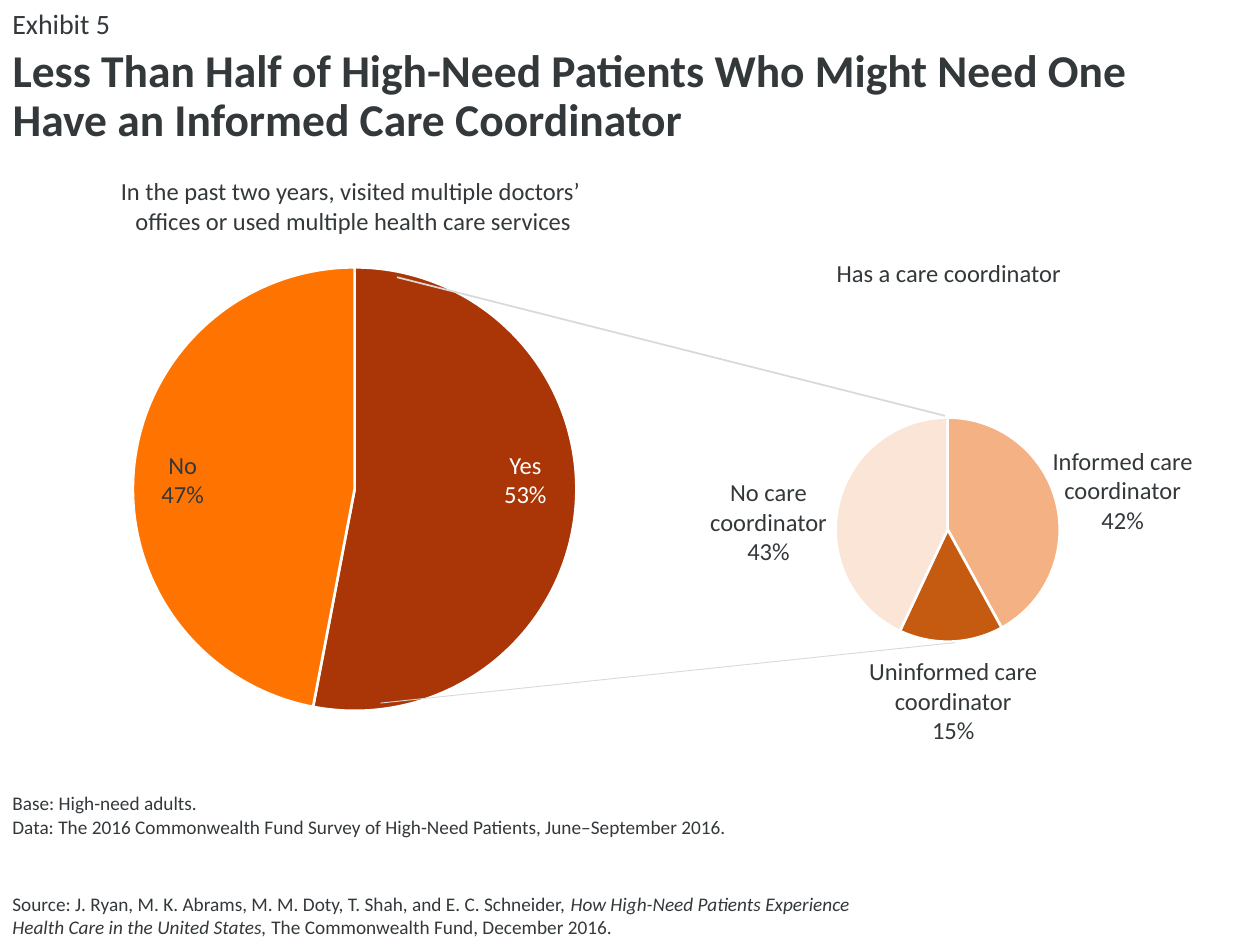
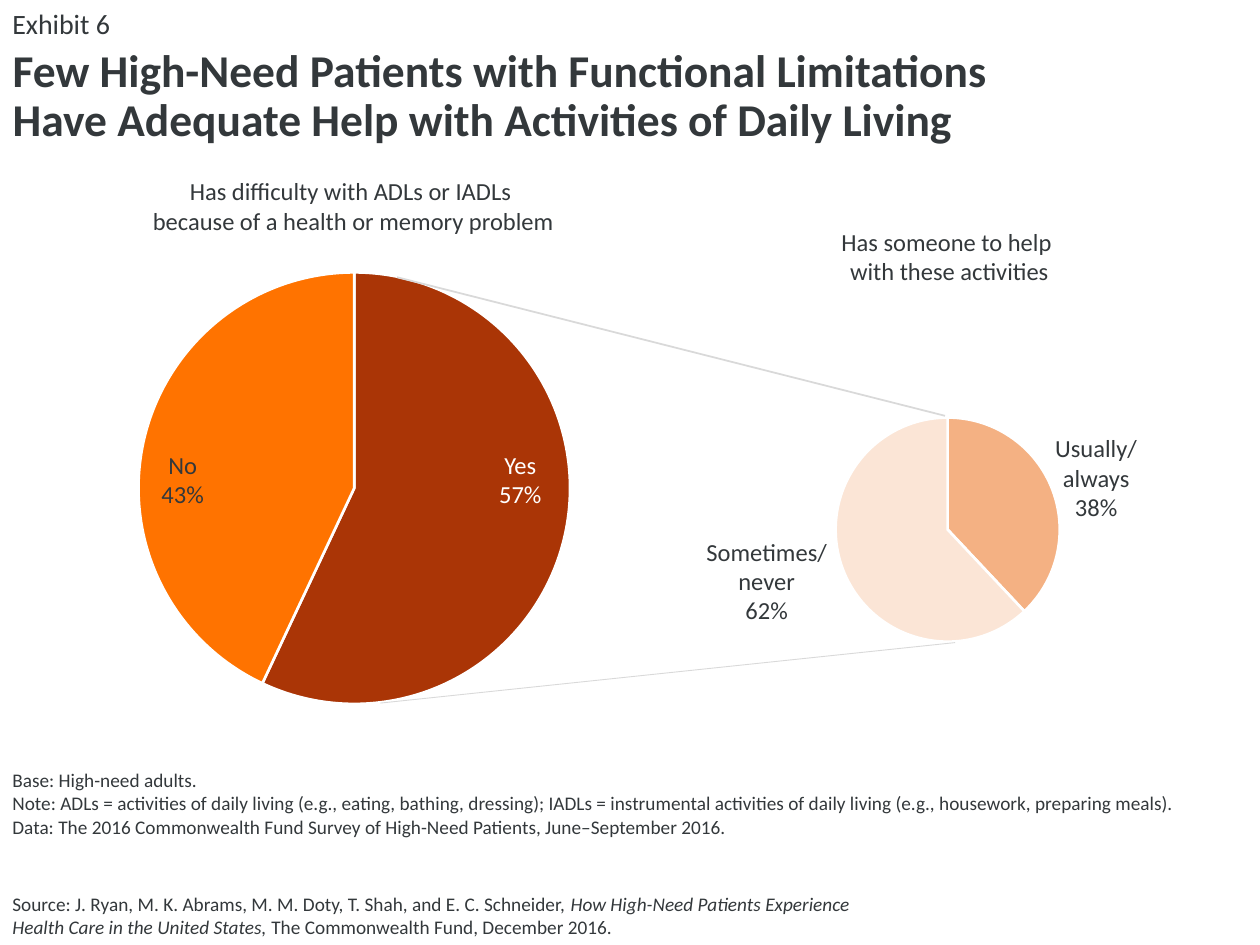
from lxml import etree
from pptx import Presentation
from pptx import util as u
from pptx.chart import data as cd
from pptx.dml import color as col
from pptx.enum import chart as ch, shapes as sh, text as tx
from pptx.oxml import ns

HEX = {"ink": "33383B", "white": "FFFFFF", "black": "000000", "rule": "D9D9D9",
       "rust": "AA3506", "orange": "FF7300", "peach": "F4B183",
       "brown": "C55A11", "cream": "FBE5D6"}
FONT = "Calibri"
WIDE, HIGH = u.Inches(10), u.Inches(7.5)
COLS, ROWS = 100, 75
STAGE = (0, 13, 100, 47)
BIG, SMALL = ("rust", "orange"), ("peach", "brown", "cream")
ROUND = (0.332, 0.345, 0.413, 0.434)
BASE = "Base: High-need adults."
DATA = "Data: The 2016 Commonwealth Fund Survey of High-Need Patients, June–September 2016."
SOURCE = [
    ("Source: J. Ryan, M. K. Abrams, M. M. Doty, T. Shah, and E. C. Schneider, ", False),
    ("How High-Need Patients Experience Health Care in the United States, ", True),
    ("The Commonwealth Fund, December 2016.", False)]


def rgb(name):
    return col.RGBColor.from_string(HEX[name])


def grid(box):
    x, y, w, h = box
    return (round(x * WIDE / COLS), round(y * HIGH / ROWS),
            round(w * WIDE / COLS), round(h * HIGH / ROWS))


def shift(box, part):
    return (box[0] + part[0], box[1] + part[1], *part[2:])


def style(font, size, tone="ink", bold=False, slant=False):
    font.name, font.size = FONT, u.Pt(size)
    font.bold, font.italic = bold, slant
    font.color.rgb = rgb(tone)


def fill(par, runs, size, tone="ink", bold=False):
    for words, slant in runs:
        for i, line in enumerate(words.split("\n")):
            if i:
                par.add_line_break()
            run = par.add_run()
            run.text = line
            style(run.font, size, tone, bold, slant)


def write(slide, box, pars, size, tone="ink", wrap=True, low=False, mid=False):
    frame = slide.shapes.add_textbox(*grid(box)).text_frame
    frame.word_wrap = wrap
    frame.vertical_anchor = tx.MSO_ANCHOR.BOTTOM if low else tx.MSO_ANCHOR.TOP
    for i, runs in enumerate(pars):
        par = frame.add_paragraph() if i else frame.paragraphs[0]
        par.alignment = tx.PP_ALIGN.CENTER if mid else tx.PP_ALIGN.LEFT
        fill(par, runs, size, tone)


def head(slide, box, count, words):
    title = slide.shapes.title
    title.left, title.top, title.width, title.height = grid(shift(box, (0, 3.3, 100, 8)))
    frame = title.text_frame
    frame.word_wrap = True
    frame.auto_size = tx.MSO_AUTO_SIZE.NONE
    frame.vertical_anchor = tx.MSO_ANCHOR.TOP
    par = frame.paragraphs[0]
    par.alignment, par.line_spacing = tx.PP_ALIGN.LEFT, 0.9
    fill(par, [(words, False)], 26, bold=True)
    write(slide, shift(box, (0, 0, 100, 3.3)), [[(f"Exhibit {count}", False)]], 16)


def foot(slide, notes):
    high = 1.9 * len(notes) + 0.9
    write(slide, (0, 67 - high, 100, high), [[(n, False)] for n in notes], 11, low=True)
    write(slide, (0, 70.3, 71.3, 4.7), [SOURCE], 11, low=True)


def label(slide, box, words, x, y, w, tone="ink"):
    high = 2.37 * len(words.split("\n")) + 1
    write(slide, shift(box, (x, y, w, high)), [[(words, False)]], 14, tone,
          wrap=False, mid=True)


def frame_plot(chart, plot):
    area = chart.plots[0]._element.getparent()
    old = area.find(ns.qn("c:layout"))
    if old is not None:
        area.remove(old)
    lay = etree.Element(ns.qn("c:layout"))
    area.insert(0, lay)
    man = etree.SubElement(lay, ns.qn("c:manualLayout"))
    pairs = [("layoutTarget", "inner"), ("xMode", "edge"), ("yMode", "edge")]
    for tag, val in pairs + list(zip("xywh", plot)):
        etree.SubElement(man, ns.qn("c:" + tag)).set("val", str(val))


def pie(slide, box, vals, tones, plot):
    data = cd.CategoryChartData()
    data.categories = [str(i + 1) for i in range(len(vals))]
    data.add_series("Series 1", vals)
    chart = slide.shapes.add_chart(ch.XL_CHART_TYPE.PIE, *grid(box), data).chart
    chart.has_legend = chart.has_title = False
    style(chart.font, 10, "black")
    body = chart.plots[0]
    body.vary_by_categories = True
    for i, tone in enumerate(tones):
        form = body.series[0].points[i].format
        form.fill.solid()
        form.fill.fore_color.rgb = rgb(tone)
        form.line.color.rgb = rgb("white")
        form.line.width = u.Pt(1.5)
    frame_plot(chart, plot)


def link(slide, box, start, end, width):
    a = grid(shift(box, (*start, 0, 0)))[:2]
    b = grid(shift(box, (*end, 0, 0)))[:2]
    line = slide.shapes.add_connector(sh.MSO_CONNECTOR.STRAIGHT, *a, *b)
    line.line.color.rgb = rgb("rule")
    line.line.width = u.Pt(width)
    etree.SubElement(line._element.spPr, ns.qn("a:effectLst"))


def stage(slide, box, left, right, tags):
    spot, vals, plot = left
    pie(slide, shift(box, spot), vals, BIG, plot)
    vals, tones = right
    pie(slide, shift(box, (51.9, 6, 43.3, 41)), vals, tones, ROUND)
    link(slide, box, (30.2, 42.8), (75.8, 38), 0.5)
    link(slide, box, (31.5, 9), (75, 20), 1)
    for tag in tags:
        label(slide, box, *tag)


PAGES = [
    dict(title="Less Than Half of High-Need Patients Who Might Need One \n"
               "Have an Informed Care Coordinator",
         left=((9.1, 6.8, 38.1, 38.2), (53, 47), (0.038, 0.037, 0.924, 0.922)),
         right=((42, 15, 43), SMALL),
         tags=[("In the past two years, visited multiple doctors’ \n"
                "offices or used multiple health care services", 8.4, 0.5, 39.3),
               ("No\n47%", 11.8, 22.2, 5.4),
               ("Yes\n53%", 39, 22.2, 5.4, "white"),
               ("No care\ncoordinator\n43%", 55.3, 24.4, 11.4),
               ("Informed care\ncoordinator\n42%", 82.5, 21.9, 13.2),
               ("Uninformed care\ncoordinator\n15%", 67.9, 38.6, 15.5),
               ("Has a care coordinator", 65.3, 7, 20)],
         notes=[BASE, DATA]),
    dict(title="Few High-Need Patients with Functional Limitations \n"
               "Have Adequate Help with Activities of Daily Living",
         left=((5.6, 3.3, 44.2, 43.1), (57, 43), (0.122, 0.123, 0.775, 0.796)),
         right=((38, 62), SMALL[::2]),
         tags=[("Has difficulty with ADLs or IADLs \n"
                "because of a health or memory problem", 11, 0.5, 34.1),
               ("Has someone to help \nwith these activities", 65.7, 4.5, 19.3),
               ("No\n43%", 11.8, 22.2, 5.4),
               ("Yes\n57%", 38.6, 22.2, 5.4, "white"),
               ("Sometimes/\nnever\n62%", 55, 29.1, 11.7),
               ("Usually/\nalways\n38%", 82.7, 20.9, 8.6)],
         notes=[BASE,
                "Note: ADLs = activities of daily living (e.g., eating, bathing, dressing); "
                "IADLs = instrumental activities of daily living "
                "(e.g., housework, preparing meals).",
                DATA]),
]


def main():
    deck = Presentation()
    deck.slide_width, deck.slide_height = WIDE, HIGH
    for count, page in enumerate(PAGES, 5):
        slide = deck.slides.add_slide(deck.slide_layouts[5])
        head(slide, (0, 0, 100, 11.3), count, page["title"])
        stage(slide, STAGE, page["left"], page["right"], page["tags"])
        foot(slide, page["notes"])
    deck.save("out.pptx")


if __name__ == "__main__":
    main()
